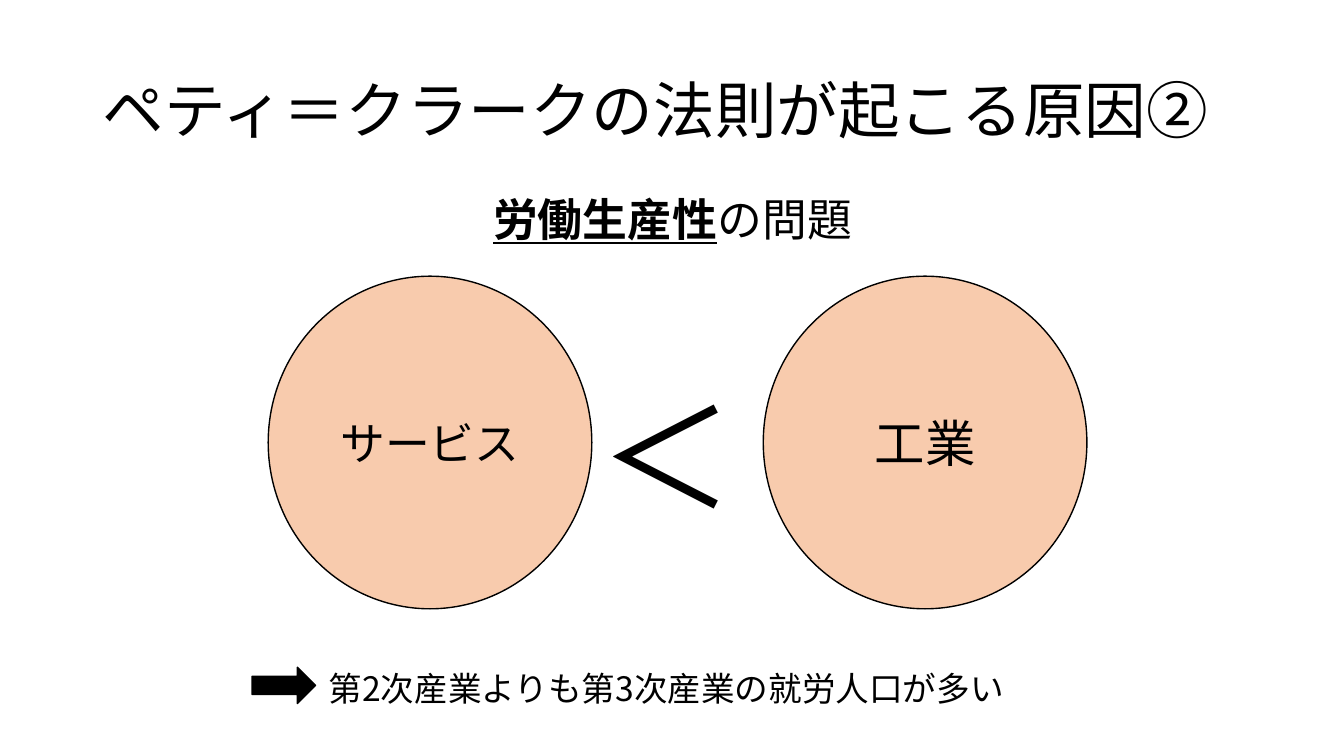
from lxml.etree import SubElement
from pptx import Presentation
from pptx.dml.color import RGBColor
from pptx.enum.shapes import MSO_SHAPE
from pptx.enum.text import MSO_ANCHOR, PP_ALIGN
from pptx.oxml.ns import qn
from pptx.util import Inches, Pt

FONT = "Noto Sans CJK JP"
BLACK = "000000"
PEACH = "F8CBAD"


def write(shape, parts, size, align=PP_ALIGN.LEFT, anchor=MSO_ANCHOR.TOP):
    """Fill a shape with one paragraph; parts are (text, emphasized) pairs."""
    frame = shape.text_frame
    frame.word_wrap = True
    frame.vertical_anchor = anchor
    paragraph = frame.paragraphs[0]
    paragraph.alignment = align
    for text, emphasized in parts:
        run = paragraph.add_run()
        run.text = text
        font = run.font
        font.name = FONT
        font.size = Pt(size)
        font.bold = font.underline = emphasized
        font.color.rgb = RGBColor.from_string(BLACK)
        # Japanese characters take the East Asian typeface
        SubElement(run._r.get_or_add_rPr(), qn("a:ea")).set("typeface", FONT)
    return paragraph


def add_outlined(kind, left, top, width, height, fill):
    shape = slide.shapes.add_shape(
        kind, Inches(left), Inches(top), Inches(width), Inches(height))
    shape.shadow.inherit = False
    shape.fill.solid()
    shape.fill.fore_color.rgb = RGBColor.from_string(fill)
    shape.line.color.rgb = RGBColor.from_string(BLACK)
    shape.line.width = Pt(1)
    return shape


prs = Presentation()
prs.slide_width = Inches(13.33)
prs.slide_height = Inches(7.5)
slide = prs.slides.add_slide(prs.slide_layouts[6])

title = slide.shapes.add_textbox(Inches(0.92), Inches(0.4), Inches(11.5), Inches(1.45))
title_line = write(title, [("ペティ＝クラークの法則が起こる原因②", False)], 44,
                   anchor=MSO_ANCHOR.MIDDLE)
title_line.line_spacing = 0.9

issue = slide.shapes.add_textbox(Inches(2.74), Inches(1.85), Inches(7.86), Inches(0.64))
write(issue, [("労働生産性", True), ("の問題", False)], 32, PP_ALIGN.CENTER)

for sector, left, size in [("サービス", 2.66, 32), ("工業", 7.57, 36)]:
    circle = add_outlined(MSO_SHAPE.FLOWCHART_CONNECTOR, left, 2.74, 3.21, 3.3, PEACH)
    write(circle, [(sector, False)], size, PP_ALIGN.CENTER, MSO_ANCHOR.MIDDLE)

less_than = slide.shapes.add_textbox(Inches(5.85), Inches(3.65), Inches(0.87), Inches(1.72))
write(less_than, [("＜", False)], 96)

add_outlined(MSO_SHAPE.RIGHT_ARROW, 2.5, 6.62, 0.63, 0.36, BLACK)

conclusion = slide.shapes.add_textbox(Inches(3.16), Inches(6.58), Inches(7.59), Inches(0.5))
write(conclusion, [("第2次産業よりも第3次産業の就労人口が多い", False)], 24)

prs.save("out.pptx")
